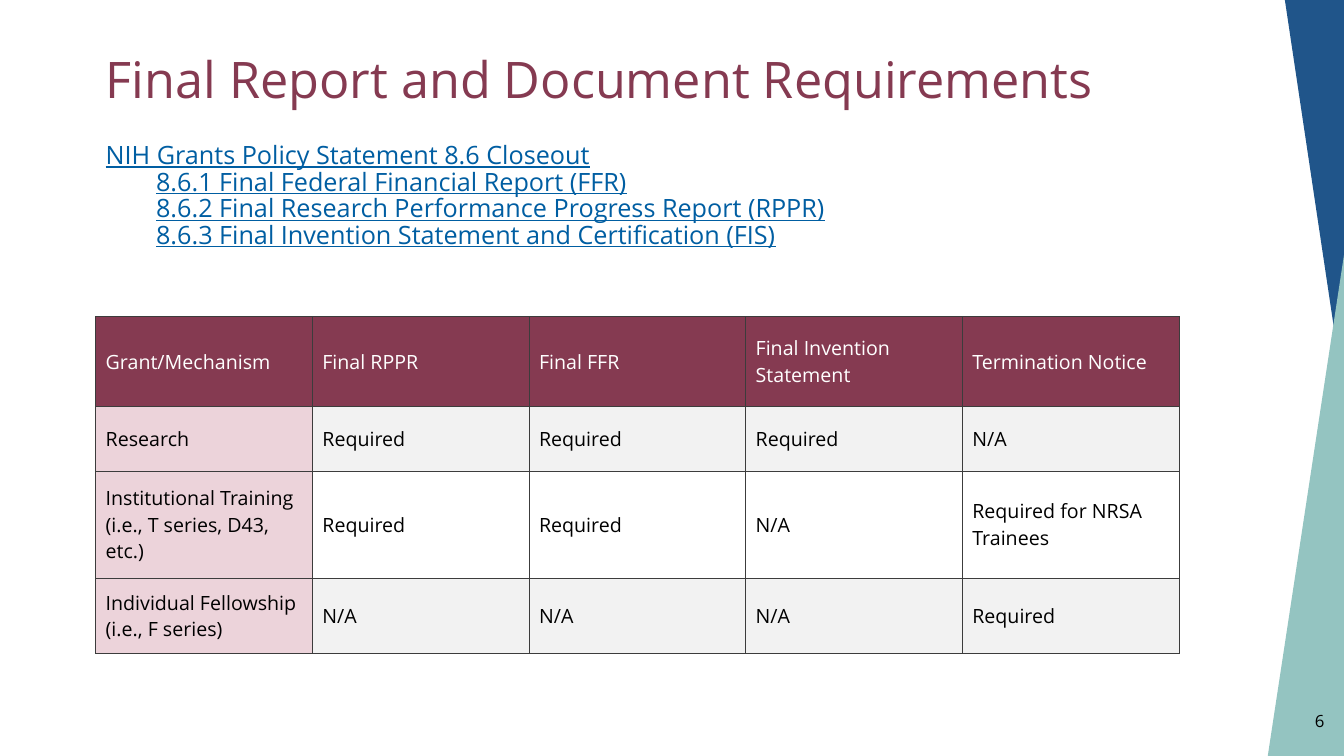
from lxml.etree import SubElement
from pptx import Presentation
from pptx.dml.color import RGBColor
from pptx.enum.shapes import MSO_SHAPE
from pptx.enum.text import MSO_ANCHOR, MSO_AUTO_SIZE, PP_ALIGN
from pptx.oxml.ns import qn
from pptx.util import Cm, Pt

PLUM = RGBColor(0x85, 0x3A, 0x51)
PINK = RGBColor(0xEC, 0xD3, 0xDA)
GRAY = RGBColor(0xF2, 0xF2, 0xF2)
WHITE = RGBColor(0xFF, 0xFF, 0xFF)
BLACK = RGBColor(0x00, 0x00, 0x00)
NAVY = RGBColor(0x20, 0x55, 0x8A)
TEAL = RGBColor(0x94, 0xC4, 0xC1)
LINK_BLUE = RGBColor(0x00, 0x5E, 0xA2)
BORDER = RGBColor(0x3C, 0x3C, 0x3C)

TITLE = "Final Report and Document Requirements"
SECTIONS = [
    (0, "NIH Grants Policy Statement 8.6 Closeout"),
    (1, "8.6.1 Final Federal Financial Report (FFR)"),
    (1, "8.6.2 Final Research Performance Progress Report (RPPR)"),
    (1, "8.6.3 Final Invention Statement and Certification (FIS)"),
]
REQUIREMENTS = [
    ("Grant/Mechanism", "Final RPPR", "Final FFR", "Final Invention Statement", "Termination Notice"),
    ("Research", "Required", "Required", "Required", "N/A"),
    ("Institutional Training\n(i.e., T series, D43, etc.)", "Required", "Required", "N/A",
     "Required for NRSA Trainees"),
    ("Individual Fellowship (i.e., F series)", "N/A", "N/A", "N/A", "Required"),
]
ROW_HEIGHTS = [2.26, 1.63, 2.7, 1.9]
COLUMN_WIDTH = 5.46
LEFT = 2.41
SIDE_TRIANGLES = [
    (NAVY, 0, 180, (32.38, 0, 1.49, 9.96)),
    (TEAL, 1, 0, (31.95, 6.43, 1.92, 12.62)),
]
TITLE_FORMAT = {"size": Pt(36), "color": PLUM}
LINK_FORMAT = {"size": Pt(18), "color": LINK_BLUE, "underline": True}
HEADER_FORMAT = {"size": Pt(14), "color": WHITE, "bold": False}
CELL_FORMAT = {"size": Pt(14), "color": BLACK, "bold": False}
NUMBER_FORMAT = {"size": Pt(12), "color": BLACK}


def format_font(paragraph, values):
    font = paragraph.font
    font.name = "Open Sans"
    for name, value in values.items():
        if name == "color":
            font.color.rgb = value
        else:
            setattr(font, name, value)


def place(shape, left, top, width, height):
    for name, value in zip(("left", "top", "width", "height"), (left, top, width, height)):
        setattr(shape, name, Cm(value))


def add_triangle(slide, color, apex, rotation, box):
    triangle = slide.shapes.add_shape(MSO_SHAPE.ISOSCELES_TRIANGLE, *map(Cm, box))
    triangle.adjustments[0] = apex
    triangle.rotation = rotation
    triangle.shadow.inherit = False
    triangle.fill.solid()
    triangle.fill.fore_color.rgb = color
    triangle.line.fill.background()


def fill_title(title):
    place(title, LEFT, 0.43, 28.65, 3.1)
    title.text = TITLE
    title.text_frame.vertical_anchor = MSO_ANCHOR.MIDDLE
    title.text_frame.auto_size = MSO_AUTO_SIZE.NONE
    paragraph = title.text_frame.paragraphs[0]
    paragraph.alignment = PP_ALIGN.LEFT
    format_font(paragraph, TITLE_FORMAT)


def fill_sections(body):
    place(body, LEFT, 3.48, 27.3, 5.64)
    frame = body.text_frame
    frame.text = "\n".join(text for level, text in SECTIONS)
    frame.auto_size = MSO_AUTO_SIZE.NONE
    for paragraph, (level, text) in zip(frame.paragraphs, SECTIONS):
        paragraph.level = level
        paragraph.space_before = Pt(0)
        paragraph.line_spacing = 0.88
        properties = paragraph._p.get_or_add_pPr()
        properties.set("marL", str(Cm(1.27 * level)))
        properties.set("indent", "0")
        SubElement(properties, qn("a:buNone"))
        format_font(paragraph.runs[0], LINK_FORMAT)


def add_borders(cell):
    properties = cell._tc.get_or_add_tcPr()
    for side in ("L", "R", "T", "B"):
        line = SubElement(properties, qn(f"a:ln{side}"), w=str(Pt(0.5)))
        fill = SubElement(line, qn("a:solidFill"))
        SubElement(fill, qn("a:srgbClr"), val=str(BORDER))


def cell_color(row, column):
    if row == 0:
        return PLUM
    if column == 0:
        return PINK
    return GRAY if row % 2 else WHITE


def add_requirements(slide):
    column_count = len(REQUIREMENTS[0])
    table = slide.shapes.add_table(
        len(REQUIREMENTS), column_count, Cm(LEFT), Cm(7.98),
        Cm(COLUMN_WIDTH * column_count), Cm(sum(ROW_HEIGHTS))).table
    for column in table.columns:
        column.width = Cm(COLUMN_WIDTH)
    for row, texts in enumerate(REQUIREMENTS):
        table.rows[row].height = Cm(ROW_HEIGHTS[row])
        for column, text in enumerate(texts):
            cell = table.cell(row, column)
            cell.text = text
            cell.vertical_anchor = MSO_ANCHOR.MIDDLE
            add_borders(cell)
            cell.fill.solid()
            cell.fill.fore_color.rgb = cell_color(row, column)
            for paragraph in cell.text_frame.paragraphs:
                format_font(paragraph.runs[0], CELL_FORMAT if row else HEADER_FORMAT)


def add_slide_number(slide):
    box = slide.shapes.add_textbox(Cm(22.45), Cm(17.65), Cm(11.18), Cm(1.02))
    frame = box.text_frame
    frame.word_wrap = True
    frame.vertical_anchor = MSO_ANCHOR.MIDDLE
    frame.text = "6"
    frame.paragraphs[0].alignment = PP_ALIGN.RIGHT
    format_font(frame.paragraphs[0], NUMBER_FORMAT)


def main():
    presentation = Presentation()
    presentation.slide_width = Cm(33.87)
    presentation.slide_height = Cm(19.05)
    slide = presentation.slides.add_slide(presentation.slide_layouts[1])
    for triangle in SIDE_TRIANGLES:
        add_triangle(slide, *triangle)
    fill_title(slide.shapes.title)
    fill_sections(slide.placeholders[1])
    add_requirements(slide)
    add_slide_number(slide)
    presentation.save("out.pptx")


if __name__ == "__main__":
    main()
